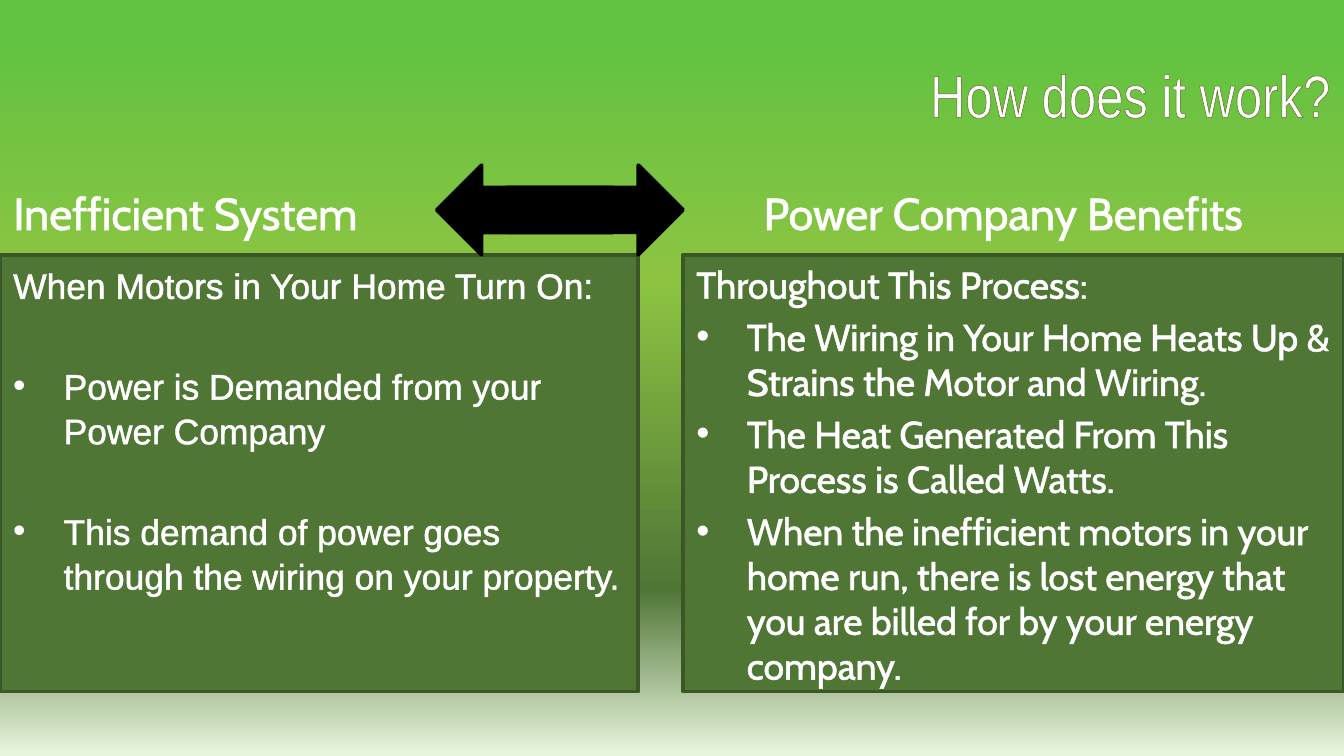
from dataclasses import dataclass

from lxml.etree import SubElement
from pptx import Presentation
from pptx.dml.color import RGBColor
from pptx.enum.shapes import MSO_SHAPE
from pptx.enum.text import MSO_ANCHOR, PP_ALIGN
from pptx.oxml.ns import qn
from pptx.util import Emu, Pt

PX = 9525


@dataclass(frozen=True)
class Theme:
    """Colours, fonts and type sizes of the slide."""
    white: str = "FFFFFF"
    black: str = "000000"
    panel: str = "507636"
    panel_line: str = "3B5728"
    title_outline: str = "5D631F"
    gradient: tuple = ((4, "60C341"), (37, "8CC442"), (78, "507636"), (100, "EAF7E0"))
    title_font: str = "Arial Narrow"
    plain_font: str = "Arial"
    main_font: str = "Cabin"
    title_size: int = 32
    heading_size: int = 24
    main_size: int = 20
    plain_size: int = 19
    line_width: int = 2


THEME = Theme()


def emu_box(box):
    """Turn a box in px into EMU lengths."""
    return [Emu(value * PX) for value in box]


def apply_format(target, values):
    """Set each attribute named in a dict of format values."""
    for name, value in values.items():
        setattr(target, name, value)


def add_background(slide):
    """Fill the slide with the vertical green gradient."""
    fill = slide.background.fill
    fill.gradient()
    fill.gradient_angle = 270
    stops = slide.element.find(".//" + qn("a:gsLst"))
    stops.clear()
    for position, colour in THEME.gradient:
        stop = SubElement(stops, qn("a:gs"), pos=str(position * 1000))
        SubElement(stop, qn("a:srgbClr"), val=colour)


def add_run(paragraph, text, font, size, outline, outline_width):
    """Add white text with an outline to a paragraph."""
    run = paragraph.add_run()
    run.text = text
    apply_format(run.font, {"name": font, "size": Pt(size)})
    run.font.fill.solid()
    run.font.fill.fore_color.rgb = RGBColor.from_string(THEME.white)
    properties = run.font._element
    line = SubElement(properties, qn("a:ln"), w=str(Pt(outline_width)))
    fill = SubElement(line, qn("a:solidFill"))
    SubElement(fill, qn("a:srgbClr"), val=outline)
    properties.insert(0, line)


def add_label(slide, box, text, font, size, outline=THEME.white, outline_width=1.45,
              alignment=PP_ALIGN.LEFT):
    """Place one line of outlined text in a box."""
    frame = slide.shapes.add_textbox(*emu_box(box)).text_frame
    apply_format(frame, {"word_wrap": True, "vertical_anchor": MSO_ANCHOR.MIDDLE})
    paragraph = frame.paragraphs[0]
    paragraph.alignment = alignment
    add_run(paragraph, text, font, size, outline, outline_width)


def add_filled_shape(slide, kind, box, fill, line):
    """Place a flat preset shape with a solid fill and line."""
    shape = slide.shapes.add_shape(kind, *emu_box(box))
    shape.shadow.inherit = False
    shape.fill.solid()
    shape.fill.fore_color.rgb = RGBColor.from_string(fill)
    shape.line.color.rgb = RGBColor.from_string(line)
    shape.line.width = Pt(THEME.line_width)
    return shape


def add_panel(slide, box, lead, bullets, font, size, gap, line_spacing=1.0):
    """Place a green panel with a lead line and a bulleted list."""
    shape = add_filled_shape(slide, MSO_SHAPE.RECTANGLE, box, THEME.panel, THEME.panel_line)
    frame = shape.text_frame
    apply_format(frame, {"word_wrap": True, "vertical_anchor": MSO_ANCHOR.TOP})
    for index, text in enumerate([lead, *bullets]):
        paragraph = frame.add_paragraph() if index else frame.paragraphs[0]
        apply_format(paragraph, {"alignment": PP_ALIGN.LEFT, "line_spacing": line_spacing})
        if index:
            paragraph.space_before = Pt(gap)
            properties = paragraph._p.get_or_add_pPr()
            properties.set("marL", str(36 * PX))
            properties.set("indent", str(-36 * PX))
            SubElement(properties, qn("a:buFont"), typeface=THEME.plain_font)
            SubElement(properties, qn("a:buChar"), char="•")
        add_run(paragraph, text, font, size, THEME.white, 1.45)


def add_double_arrow(slide, box):
    """Overlap two opposite striped arrows across a box."""
    left, top, width, height = box
    arrow_width = 136
    for arrow_left, rotation in ((left, 180), (left + width - arrow_width, 0)):
        arrow = add_filled_shape(slide, MSO_SHAPE.STRIPED_RIGHT_ARROW,
                                 (arrow_left, top, arrow_width, height),
                                 THEME.black, THEME.black)
        arrow.rotation = rotation


def main():
    """Build and save the slide."""
    presentation = Presentation()
    apply_format(presentation, {"slide_width": Emu(960 * PX), "slide_height": Emu(540 * PX)})
    slide = presentation.slides.add_slide(presentation.slide_layouts[6])
    add_background(slide)
    add_label(slide, (96, 22, 864, 90), "How does it work?", THEME.title_font,
              THEME.title_size, THEME.title_outline, 0.75, PP_ALIGN.RIGHT)
    add_panel(slide, (0, 182, 456, 312), "When Motors in Your Home Turn On:",
              ["Power is Demanded from your Power Company",
               "This demand of power goes through the wiring on your property."],
              THEME.plain_font, THEME.plain_size, 30, 1.05)
    for left, text in ((0, "Inefficient System"), (536, "Power Company Benefits")):
        add_label(slide, (left, 126, 424, 51), text, THEME.main_font, THEME.heading_size)
    add_panel(slide, (488, 182, 472, 312), "Throughout This Process:",
              ["The Wiring in Your Home Heats Up & Strains the Motor and Wiring.",
               "The Heat Generated From This Process is Called Watts.",
               "When the inefficient motors in your home run, there is lost energy "
               "that you are billed for by your energy company."],
              THEME.main_font, THEME.main_size, 4)
    add_double_arrow(slide, (312, 118, 176, 64))
    presentation.save("out.pptx")


if __name__ == "__main__":
    main()
